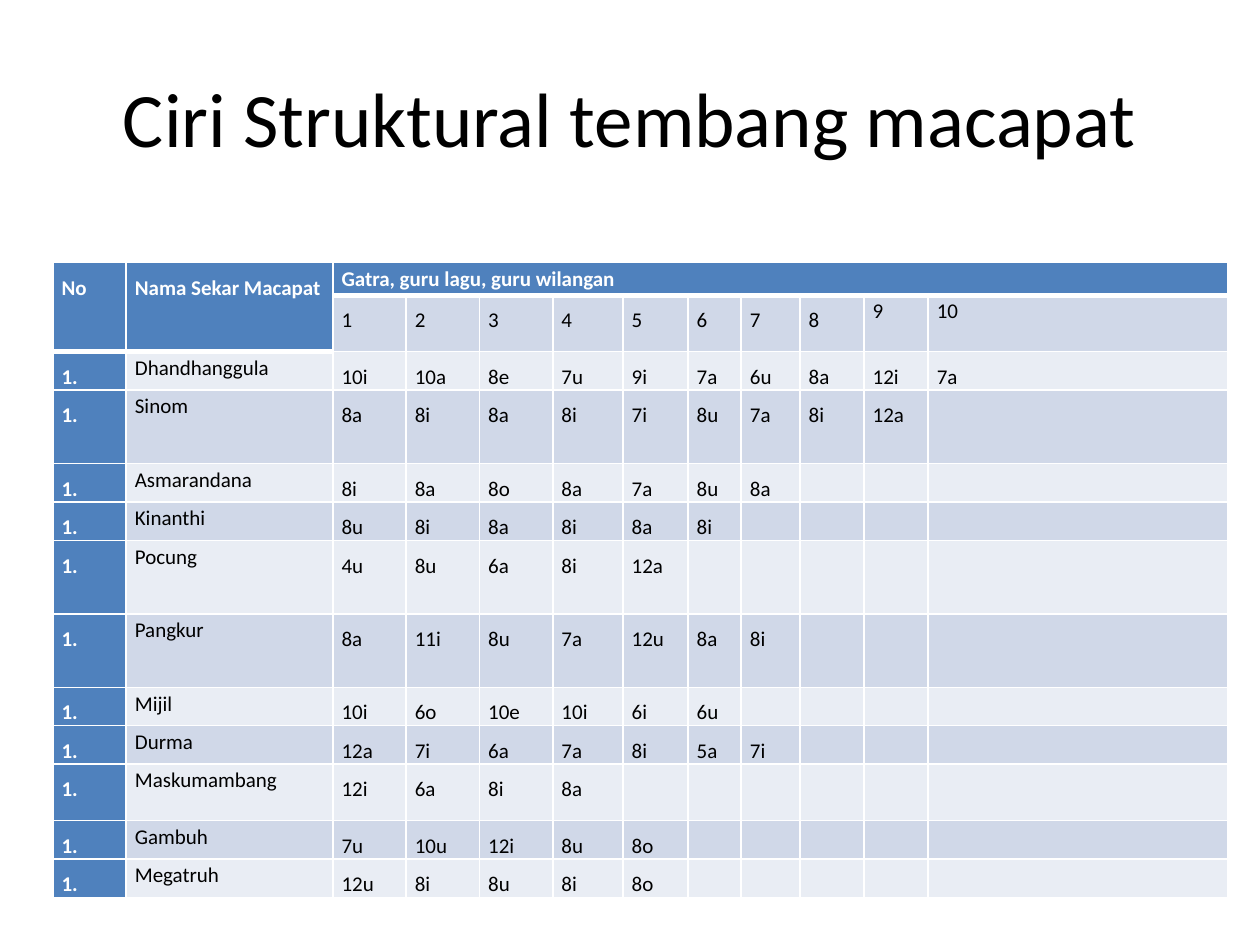
from lxml.etree import SubElement
from pptx import Presentation
from pptx.dml.color import RGBColor
from pptx.enum.text import MSO_ANCHOR, PP_ALIGN
from pptx.oxml.ns import qn
from pptx.util import Pt

BLUE = RGBColor(0x4F, 0x81, 0xBD)
BAND_DARK = RGBColor(0xD0, 0xD8, 0xE8)
BAND_LIGHT = RGBColor(0xE9, 0xED, 0xF4)
WHITE = RGBColor(0xFF, 0xFF, 0xFF)
BLACK = RGBColor(0, 0, 0)

COLUMN_WIDTHS = [41.9, 118.1, 41.9, 41.9, 41.9, 40.1, 37.2, 30.4, 33.6, 36.6, 36.6, 171.5]
ROW_HEIGHTS = [18.7, 32.2, 21, 42, 21, 21, 42, 42, 21, 21, 32.2, 21, 21]

# Each song with the vowel and syllable count of its lines
SONGS = [
    ("Dhandhanggula", "10i 10a 8e 7u 9i 7a 6u 8a 12i 7a"),
    ("Sinom", "8a 8i 8a 8i 7i 8u 7a 8i 12a"),
    ("Asmarandana", "8i 8a 8o 8a 7a 8u 8a"),
    ("Kinanthi", "8u 8i 8a 8i 8a 8i"),
    ("Pocung", "4u 8u 6a 8i 12a"),
    ("Pangkur", "8a 11i 8u 7a 12u 8a 8i"),
    ("Mijil", "10i 6o 10e 10i 6i 6u"),
    ("Durma", "12a 7i 6a 7a 8i 5a 7i"),
    ("Maskumambang", "12i 6a 8i 8a"),
    ("Gambuh", "7u 10u 12i 8u 8o"),
    ("Megatruh", "12u 8i 8u 8i 8o"),
]
table_rows = [
    ["No", "Nama Sekar Macapat", "Gatra, guru lagu, guru wilangan"],
    ["", ""] + [str(number) for number in range(1, 11)],
] + [["1.", name] + lines.split() for name, lines in SONGS]


def add_border(cell, side, width):
    line = SubElement(cell._tc.get_or_add_tcPr(), qn(f"a:{side}"), w=str(Pt(width)))
    fill = SubElement(line, qn("a:solidFill"))
    SubElement(fill, qn("a:srgbClr"), val=str(WHITE))


prs = Presentation()
prs.slide_width, prs.slide_height = Pt(720), Pt(540)
slide = prs.slides.add_slide(prs.slide_layouts[5])

# Title
title = slide.shapes.title
title.left, title.top, title.width, title.height = Pt(36), Pt(21.6), Pt(648), Pt(90)
title.text_frame.text = "Ciri Struktural tembang macapat"
title.text_frame.vertical_anchor = MSO_ANCHOR.MIDDLE
heading = title.text_frame.paragraphs[0]
heading.alignment = PP_ALIGN.CENTER
heading.font.name = "Calibri"
heading.font.size = Pt(44)
heading.font.color.rgb = BLACK

# Table grid
songs_table = slide.shapes.add_table(
    len(ROW_HEIGHTS), len(COLUMN_WIDTHS), Pt(30.2), Pt(150),
    Pt(sum(COLUMN_WIDTHS)), Pt(sum(ROW_HEIGHTS))).table
for column, width in zip(songs_table.columns, COLUMN_WIDTHS):
    column.width = Pt(width)
for row, height in zip(songs_table.rows, ROW_HEIGHTS):
    row.height = Pt(height)

# Cells: blue headings, banded body
for r, texts in enumerate(table_rows):
    for c in range(len(COLUMN_WIDTHS)):
        cell = songs_table.cell(r, c)
        is_heading = r == 0 or c == 0 or (r == 1 and c == 1)
        is_compact = c == 1 and r > 1 or r == 0 and c > 1 or r == 1 and c > 9

        cell.margin_left = cell.margin_right = Pt(5)
        cell.margin_top = cell.margin_bottom = 0
        cell.text = texts[c] if c < len(texts) else ""
        paragraph = cell.text_frame.paragraphs[0]
        paragraph.line_spacing = 1.15 if is_compact else 1.5
        paragraph.alignment = PP_ALIGN.LEFT if is_compact or c == 1 else PP_ALIGN.JUSTIFY
        paragraph.font.name = "Calibri"
        paragraph.font.size = Pt(12)
        paragraph.font.bold = is_heading
        paragraph.font.color.rgb = WHITE if is_heading else BLACK

        # Borders come before the fill in the cell properties
        ends_header = r == 0 or (r == 1 and c < 2)
        for side in ("lnL", "lnR", "lnT"):
            add_border(cell, side, 1)
        add_border(cell, "lnB", 3 if ends_header else 1)
        cell.fill.solid()
        band = BAND_DARK if r % 2 else BAND_LIGHT
        cell.fill.fore_color.rgb = BLUE if is_heading else band

# Merged headings
for column in (0, 1):
    songs_table.cell(0, column).merge(songs_table.cell(1, column))
songs_table.cell(0, 2).merge(songs_table.cell(0, 11))

prs.save("out.pptx")
